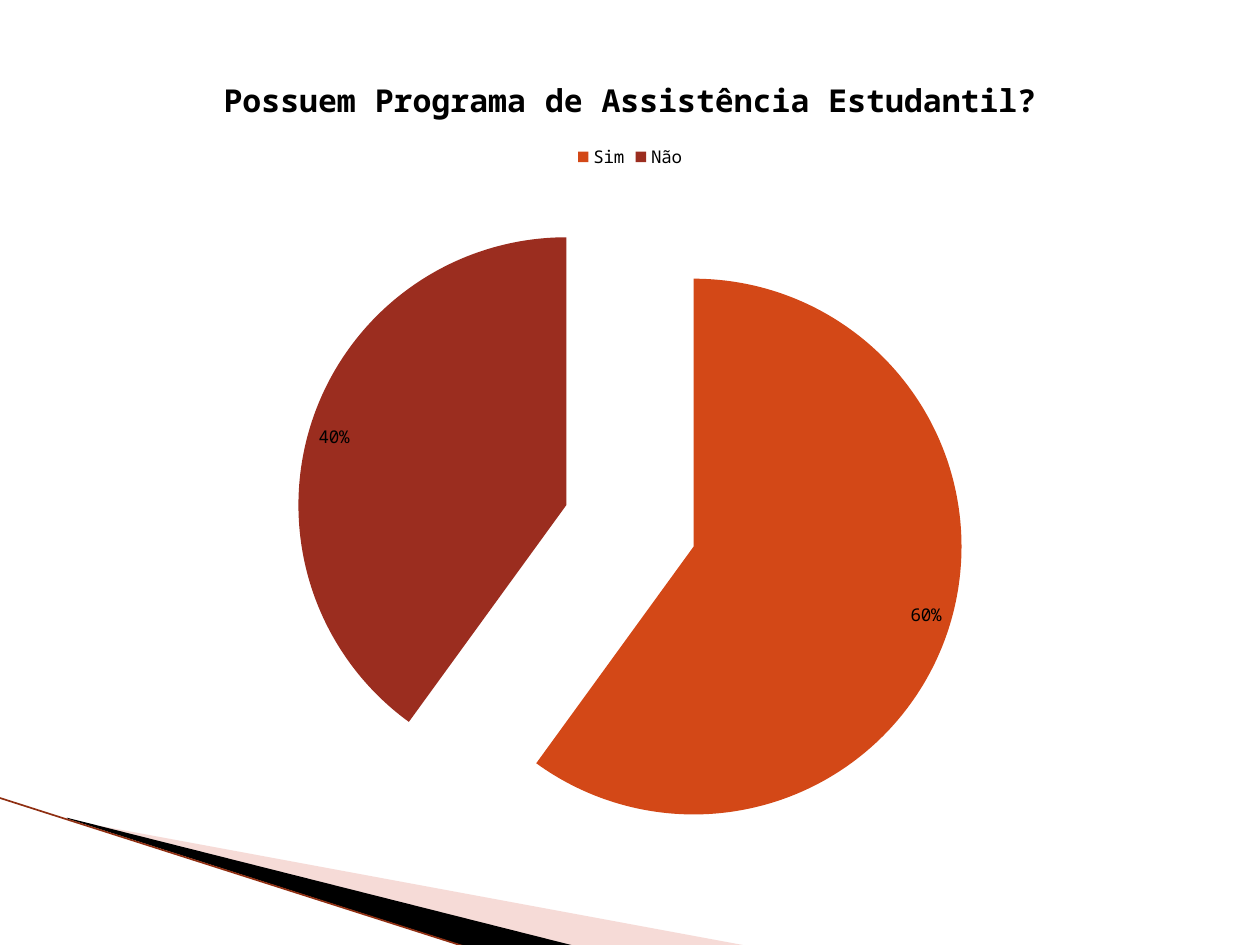
from dataclasses import dataclass

from lxml import etree
from pptx import Presentation
from pptx import util as u
from pptx.chart.data import CategoryChartData
from pptx.dml.color import RGBColor
from pptx.enum import chart as ch
from pptx.enum import shapes
from pptx.oxml import ns

FONT = "Noto Sans Mono"


@dataclass
class Wedge:
    corners: list[tuple[float, float]]
    colour: str
    opacity: int = 100


@dataclass
class Answer:
    label: str
    share: int
    colour: str


WEDGES = [
    Wedge([(39.6, 468.7), (428.4, 540.7), (328.3, 540.7), (39.6, 468)], "E9A59D", 40),
    Wedge([(38.2, 467.3), (329, 540.7), (267.8, 541.4), (38.9, 468)], "000000"),
]
ANSWERS = [Answer("Sim", 60, "D34817"), Answer("Não", 40, "9B2D1F")]


def paint(colour_format, hex_colour: str) -> None:
    colour_format.rgb = RGBColor.from_string(hex_colour)


def fill_solid(fill, hex_colour: str) -> None:
    fill.solid()
    paint(fill.fore_color, hex_colour)


def style_font(font, size: float, bold: bool = False) -> None:
    font.name = FONT
    font.size = u.Pt(size)
    font.bold = bold
    paint(font.color, "000000")


def draw_wedge(slide, wedge: Wedge) -> None:
    corners = [(u.Pt(x), u.Pt(y)) for x, y in wedge.corners]
    builder = slide.shapes.build_freeform(*corners[0])
    builder.add_line_segments(corners[1:])
    shape = builder.convert_to_shape()
    shape.shadow.inherit = False
    fill_solid(shape.fill, wedge.colour)
    shape.line.fill.background()
    if wedge.opacity < 100:
        tint = next(shape.element.spPr.iter(ns.qn("a:srgbClr")))
        etree.SubElement(tint, ns.qn("a:alpha"), val=str(wedge.opacity * 1000))


def draw_edge(slide) -> None:
    edge = slide.shapes.add_connector(
        shapes.MSO_CONNECTOR.STRAIGHT, u.Pt(-0.7), u.Pt(455.8), u.Pt(267.1), u.Pt(541.4)
    )
    edge.line.width = u.Pt(0.95)
    paint(edge.line.color, "8F2F12")
    etree.SubElement(edge.element.spPr, ns.qn("a:effectLst"))


def draw_pie(slide, question: str, answers: list[Answer], explosion: int) -> None:
    shares = CategoryChartData()
    shares.categories = [answer.label for answer in answers]
    shares.add_series("Series 1", [answer.share for answer in answers])
    pie = slide.shapes.add_chart(
        ch.XL_CHART_TYPE.PIE, u.Pt(36.7), u.Pt(25.9), u.Pt(646.6), u.Pt(475.9), shares
    ).chart
    style_font(pie.font, 10)

    pie.has_title = True
    heading = pie.chart_title.text_frame
    heading.text = question
    style_font(heading.paragraphs[0].font, 18, bold=True)
    pie.chart_title.include_in_layout = False

    pie.has_legend = True
    pie.legend.position = ch.XL_LEGEND_POSITION.TOP
    pie.legend.include_in_layout = False
    style_font(pie.legend.font, 10)

    plot = pie.plots[0]
    plot.vary_by_categories = True
    plot.has_data_labels = True
    labels = plot.data_labels
    labels.show_percentage = True
    labels.show_value = False
    labels.number_format = "0%"
    labels.number_format_is_linked = False
    labels.position = ch.XL_LABEL_POSITION.INSIDE_END
    style_font(labels.font, 10)

    series = plot.series[0]
    for index, answer in enumerate(answers):
        slice_format = series.points[index].format
        fill_solid(slice_format.fill, answer.colour)
        slice_format.line.fill.background()
    for slice_element in series._element.findall(ns.qn("c:dPt")):
        offset = etree.Element(ns.qn("c:explosion"), val=str(explosion))
        slice_element.find(ns.qn("c:spPr")).addprevious(offset)


def main() -> None:
    deck = Presentation()
    deck.slide_width, deck.slide_height = u.Pt(720), u.Pt(540)
    slide = deck.slides.add_slide(deck.slide_layouts[6])
    fill_solid(slide.background.fill, "FFFFFF")
    for wedge in WEDGES:
        draw_wedge(slide, wedge)
    draw_edge(slide)
    draw_pie(slide, "Possuem Programa de Assistência Estudantil?", ANSWERS, 25)
    deck.save("out.pptx")


if __name__ == "__main__":
    main()
